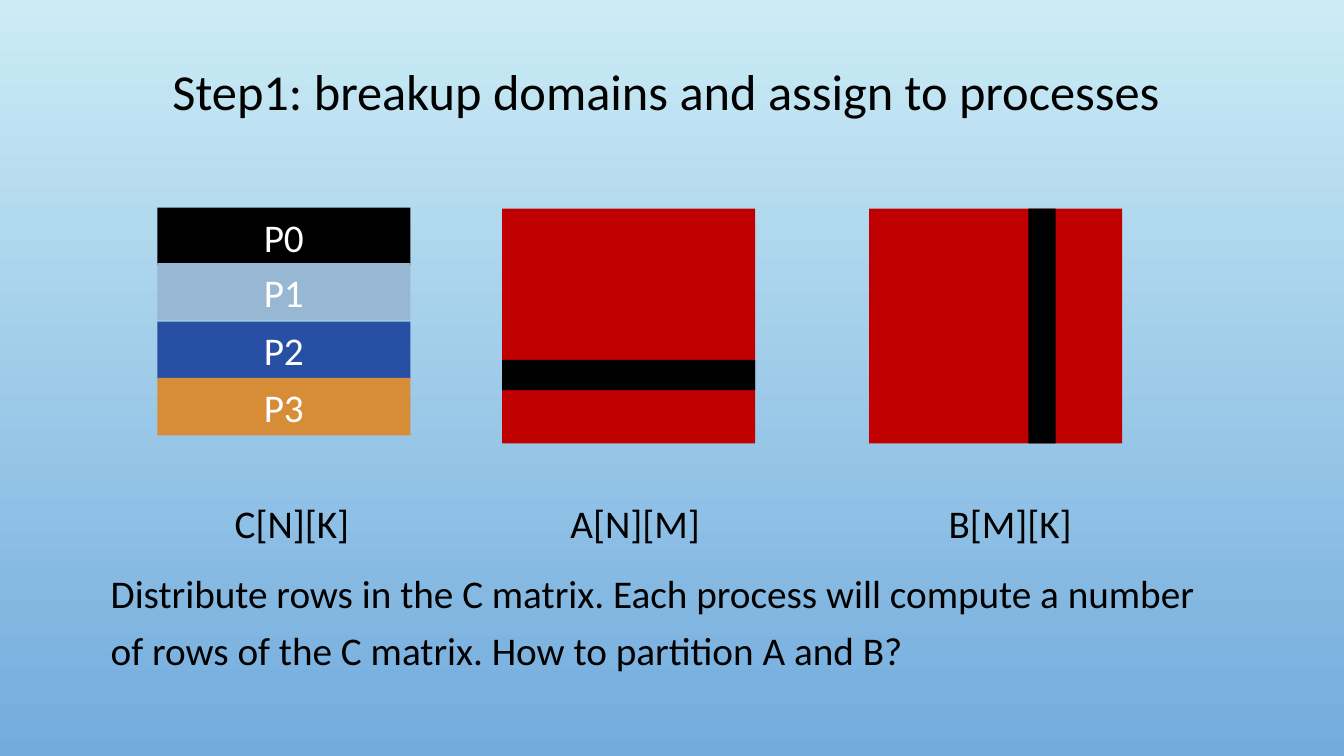
import pptx
import pptx.util
import pptx.dml.color
import pptx.enum.shapes
import pptx.enum.text
import pptx.oxml.ns
import lxml.etree

Inches, Pt = pptx.util.Inches, pptx.util.Pt
RGBColor = pptx.dml.color.RGBColor
PP_ALIGN = pptx.enum.text.PP_ALIGN
MSO_ANCHOR = pptx.enum.text.MSO_ANCHOR

SKY = RGBColor(0xCB, 0xEC, 0xF5)
DEEP_SKY = RGBColor(0x73, 0xAB, 0xDD)
BLACK = RGBColor(0, 0, 0)
WHITE = RGBColor(0xFF, 0xFF, 0xFF)
RED = RGBColor(0xC0, 0, 0)
PALE_BLUE = RGBColor(0x98, 0xB7, 0xD3)
BLUE = RGBColor(0x27, 0x4F, 0xA4)
ORANGE = RGBColor(0xD7, 0x8D, 0x38)

MATRIX_W, MATRIX_H, MATRIX_TOP = 2.51, 2.33, 2.07
C_LEFT, A_LEFT, B_LEFT = 1.56, 4.98, 8.62

prs = pptx.Presentation()
prs.slide_width, prs.slide_height = Inches(13.33), Inches(7.5)
s = prs.slides.add_slide(prs.slide_layouts[6])

bg = s.background.fill
bg.gradient()
bg.gradient_angle = 270
for stop, color in zip(bg.gradient_stops, (SKY, DEEP_SKY)):
    stop.color.rgb = color


def set_text(p, text, size, color, **formats):
    p.text = text
    for name, value in formats.items():
        setattr(p, name, value)
    for name, value in {"name": "Calibri", "size": Pt(size)}.items():
        setattr(p.font, name, value)
    p.font.color.rgb = color


def add_rect(left, top, width, height, color):
    sp = s.shapes.add_shape(pptx.enum.shapes.MSO_SHAPE.RECTANGLE,
                            Inches(left), Inches(top), Inches(width), Inches(height))
    sp.shadow.inherit = False
    sp.fill.solid()
    sp.fill.fore_color.rgb = color
    sp.line.fill.background()
    return sp


tf = s.shapes.add_textbox(Inches(1), Inches(0.32), Inches(11.33), Inches(1.23)).text_frame
tf.word_wrap = True
tf.vertical_anchor = MSO_ANCHOR.MIDDLE
set_text(tf.paragraphs[0], "Step1: breakup domains and assign to processes ", 36, BLACK,
         alignment=PP_ALIGN.CENTER, line_spacing=0.9)

tf = s.shapes.add_textbox(Inches(1), Inches(4.81), Inches(11.33), Inches(2.28)).text_frame
tf.word_wrap = True
p = tf.paragraphs[0]
tabs = lxml.etree.SubElement(p._p.get_or_add_pPr(), pptx.oxml.ns.qn("a:tabLst"))
for position in (1.23, 4.56, 8.31):
    lxml.etree.SubElement(tabs, pptx.oxml.ns.qn("a:tab"), pos=str(Inches(position)), algn="l")
set_text(p, "\tC[N][K]\tA[N][M]\tB[M][K]", 28, BLACK, line_spacing=1.2)
set_text(tf.add_paragraph(),
         "Distribute rows in the C matrix. Each process will compute a number of rows "
         "of the C matrix. How to partition A and B?",
         28, BLACK, line_spacing=1.2, space_before=Pt(10))

for left in (A_LEFT, B_LEFT):
    add_rect(left, MATRIX_TOP, MATRIX_W, MATRIX_H, RED)
add_rect(10.2, MATRIX_TOP, 0.27, MATRIX_H, BLACK)

process_rows = ((2.06, BLACK), (2.61, PALE_BLUE), (3.19, BLUE), (3.75, ORANGE))
for i, (top, color) in enumerate(process_rows):
    tf = add_rect(C_LEFT, top, MATRIX_W, 0.57, color).text_frame
    tf.vertical_anchor = MSO_ANCHOR.MIDDLE
    set_text(tf.paragraphs[0], f"P{i}", 28, WHITE, alignment=PP_ALIGN.CENTER)

add_rect(A_LEFT, 3.57, MATRIX_W, 0.3, BLACK)

prs.save("out.pptx")
